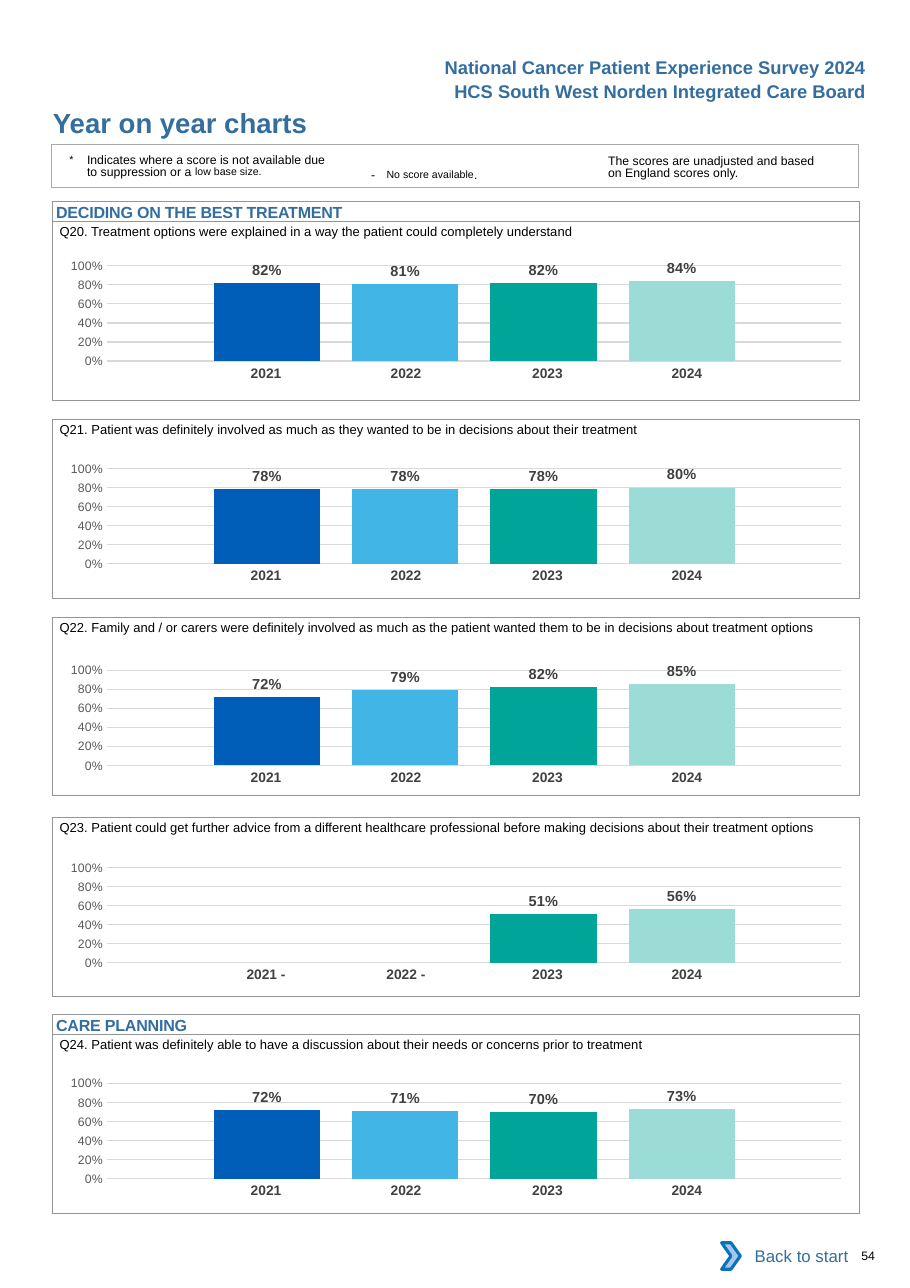
from lxml import etree
from pptx import Presentation
from pptx.chart.data import CategoryChartData
from pptx.dml.color import RGBColor
from pptx.enum.chart import XL_CHART_TYPE as ChartType, XL_LABEL_POSITION as LabelPos, XL_TICK_MARK as Tick
from pptx.enum.shapes import MSO_SHAPE as Shape
from pptx.enum.text import MSO_ANCHOR as Anchor, MSO_AUTO_SIZE as AutoSize, PP_ALIGN as Align
from pptx.oxml import parse_xml
from pptx.oxml.ns import nsdecls, qn
from pptx.util import Inches, Pt

BLUE, BLACK, GREY = "336E9F", "000000", "939598"
BAR_COLOURS = ["005EB8", "41B6E6", "00A499", "9CDCD7"]
YEARS = ["2021", "2022", "2023", "2024"]
YEAR_WIDTHS = [1.27, 1.27, 1.34, 1.27]
YEAR_RIGHT_INSETS = [0, 0, 0.04, 0.12]
PLOT_AREA = {"x": 0.08, "y": 0.15, "w": 0.91, "h": 0.67}
FRAME_LEFT, FRAME_WIDTH, FRAME_HEIGHT = 0.48, 7.32, 1.62

QUESTIONS = [
    (2.01, 2.22, YEARS, [0.82, 0.81, 0.82, 0.84],
     "Q20. Treatment options were explained in a way the patient could completely understand"),
    (3.81, 4.06, YEARS, [0.78, 0.78, 0.78, 0.80],
     "Q21. Patient was definitely involved as much as they wanted to be in decisions about their treatment"),
    (5.60, 5.89, YEARS, [0.72, 0.79, 0.82, 0.85],
     "Q22. Family and / or carers were definitely involved as much as the patient wanted them to be "
     "in decisions about treatment options"),
    (7.42, 7.68, ["2021 -", "2022 -", "2023", "2024"], [None, None, 0.51, 0.56],
     "Q23. Patient could get further advice from a different healthcare professional before making "
     "decisions about their treatment options"),
    (9.39, 9.64, YEARS, [0.72, 0.71, 0.70, 0.73],
     "Q24. Patient was definitely able to have a discussion about their needs or concerns prior to treatment"),
]
SECTIONS = [(1.83, "DECIDING ON THE BEST TREATMENT"), (9.21, "CARE PLANNING")]
BANNER = [(0.68, "HCS South West Norden Integrated Care Board"),
          (0.46, "National Cancer Patient Experience Survey 2024")]


def colour(value):
    return RGBColor.from_string(value)


class SurveyPage:
    """Holds the page style and the slide, and adds each kind of element."""

    font_name = "Arial"

    def __init__(self, deck):
        self.slide = deck.slides.add_slide(deck.slide_layouts[5])
        self.shapes = self.slide.shapes

    def style(self, font, size, hue=BLACK, bold=False):
        values = {"name": self.font_name, "size": Pt(size), "bold": bold}
        for name, value in values.items():
            setattr(font, name, value)
        font.color.rgb = colour(hue)

    def put_words(self, holder, runs, size, hue=BLACK, bold=False, align=Align.LEFT,
                  inset=(0, 0, 0, 0), anchor=Anchor.TOP, wrap=True, line=None):
        frame = holder.text_frame
        settings = {"word_wrap": wrap, "auto_size": AutoSize.NONE, "vertical_anchor": anchor}
        for side, value in zip(("left", "top", "right", "bottom"), inset):
            settings[f"margin_{side}"] = Inches(value)
        for name, value in settings.items():
            setattr(frame, name, value)
        paragraph = frame.paragraphs[0]
        paragraph.alignment = align
        if line:
            paragraph.line_spacing = Pt(line)
        for words, run_size, extras in [(runs, size, {})] if isinstance(runs, str) else runs:
            run = paragraph.add_run()
            run.text = words
            self.style(run.font, run_size, hue, bold)
            for name, value in extras.items():
                run.font._element.set(name, str(value))
        return paragraph

    def text(self, left, top, width, height, runs, size, **look):
        box = self.shapes.add_textbox(Inches(left), Inches(top), Inches(width), Inches(height))
        return self.put_words(box, runs, size, **look)

    def title(self, left, top, width, height, words, size):
        heading = self.shapes.title
        bounds = {"left": left, "top": top, "width": width, "height": height}
        for name, value in bounds.items():
            setattr(heading, name, Inches(value))
        self.put_words(heading, words, size, hue=BLUE, bold=True, inset=(0.01, 0, 0, 0))

    def shape(self, kind, left, top, width, height, fill=None, line=None, weight=0.5):
        item = self.shapes.add_shape(kind, Inches(left), Inches(top), Inches(width), Inches(height))
        item.shadow.inherit = False
        for part, hue in ((item.fill, fill), (item.line.fill, line)):
            if hue:
                part.solid()
                part.fore_color.rgb = colour(hue)
            else:
                part.background()
        if line:
            item.line.width = Pt(weight)
        return item

    def year_row(self, top, years):
        grid = self.shapes.add_table(1, len(years), Inches(1.73), Inches(top),
                                     Inches(sum(YEAR_WIDTHS)), Inches(0.27)).table
        grid.first_row = grid.horz_banding = False
        for index, (year, width, right) in enumerate(zip(years, YEAR_WIDTHS, YEAR_RIGHT_INSETS)):
            grid.columns[index].width = Inches(width)
            cell = grid.cell(0, index)
            cell.fill.background()
            cell.margin_right = Inches(right)
            cell.text = year
            paragraph = cell.text_frame.paragraphs[0]
            paragraph.alignment = Align.CENTER
            self.style(paragraph.runs[0].font, 9, "414042", True)

    def bars(self, top, scores):
        data = CategoryChartData(number_format="0%")
        data.categories = ["1"]
        for number, score in enumerate(scores, 1):
            data.add_series(f"Series {number}", [score])
        chart = self.shapes.add_chart(ChartType.COLUMN_CLUSTERED, Inches(0.39), Inches(top),
                                      Inches(7.32), Inches(1.29), data).chart
        chart.has_legend = chart.has_title = False
        chart.font.name, chart.font.size = "Calibri", Pt(10)
        chart.font.color.rgb = colour(BLACK)
        chart.category_axis.visible = False
        axis = chart.value_axis
        limits = {"minimum_scale": 0, "maximum_scale": 1, "major_unit": 0.2,
                  "major_tick_mark": Tick.NONE, "minor_tick_mark": Tick.NONE}
        for name, value in limits.items():
            setattr(axis, name, value)
        axis.format.line.fill.background()
        axis.major_gridlines.format.line.width = Pt(0.75)
        axis.major_gridlines.format.line.color.rgb = colour("D9D9D9")
        axis.tick_labels.number_format = "0%"
        axis.tick_labels.number_format_is_linked = False
        self.style(axis.tick_labels.font, 8, "595959")
        plot = chart.plots[0]
        for name, value in {"gap_width": 200, "overlap": -30, "vary_by_categories": False}.items():
            setattr(plot, name, value)
        for series, hue in zip(plot.series, BAR_COLOURS):
            series.format.fill.solid()
            series.format.fill.fore_color.rgb = colour(hue)
            labels = series.data_labels
            values = {"show_value": True, "position": LabelPos.OUTSIDE_END,
                      "number_format": "0%", "number_format_is_linked": False}
            for name, value in values.items():
                setattr(labels, name, value)
            self.style(labels.font, 9.5, "404040", True)
        self.place_plot(chart)

    def place_plot(self, chart):
        area = chart._chartSpace.chart.plotArea
        for old in area.findall(qn("c:layout")):
            area.remove(old)
        layout = parse_xml(f"<c:layout {nsdecls('c')}><c:manualLayout/></c:layout>")
        settings = {"layoutTarget": "inner", "xMode": "edge", "yMode": "edge", **PLOT_AREA}
        for name, value in settings.items():
            etree.SubElement(layout[0], qn(f"c:{name}")).set("val", str(value))
        area.insert(0, layout)

    def question(self, top, chart_top, years, scores, words):
        self.year_row(chart_top + 1.05, years)
        self.bars(chart_top, scores)
        self.shape(Shape.RECTANGLE, FRAME_LEFT, top, FRAME_WIDTH, FRAME_HEIGHT, line=GREY)
        self.text(0.54, top - 0.07, 7.21, 0.24, words, 8.5, inset=(0, 0.09, 0, 0))

    def section(self, top, words):
        band = self.shape(Shape.RECTANGLE, FRAME_LEFT, top, FRAME_WIDTH, 0.18, line=GREY)
        self.put_words(band, [(words, 10.5, {"spc": -10})], 10.5, hue=BLUE, bold=True,
                       inset=(0.03, 0.01, 0, 0))

    def key(self):
        self.text(5.52, 1.38, 2.01, 0.27, "The scores are unadjusted and based on England scores only.",
                  8, inset=(0, 0.03, 0, 0), line=8.1)
        self.text(3.27, 1.41, 1.83, 0.24,
                  [("- ", 8, {"spc": 260}), ("No score available", 12, {"baseline": 3000}), (".", 8, {})],
                  8, inset=(0.1, 0.05, 0.1, 0.05))
        suppression = self.text(
            0.63, 1.38, 2.72, 0.27,
            [("*\t", 12, {"baseline": 3000}),
             ("Indicates where a score is not available due to suppression or a ", 8, {}),
             ("low base size.", 12, {"baseline": 7000})],
            8, inset=(0, 0.03, 0.35, 0), line=8.1)
        hanging = suppression._p.get_or_add_pPr()
        hanging.set("marL", str(Inches(0.16)))
        hanging.set("indent", str(-Inches(0.16)))
        self.shape(Shape.RECTANGLE, 0.47, 1.31, 7.32, 0.39, line="A9AAAD", weight=0.75)

    def back_button(self):
        label = self.shape(Shape.RECTANGLE, 6.62, 11.19, 1.18, 0.42, fill="FFFFFF")
        self.put_words(label, "Back to start", 11, hue=BLUE, align=Align.RIGHT,
                       inset=(0.1, 0.05, 0.1, 0.05), anchor=Anchor.MIDDLE)
        self.shape(Shape.CHEVRON, 6.55, 11.28, 0.17, 0.24, fill="A8C7E9", line="0A74BB", weight=2)


def main():
    deck = Presentation()
    deck.slide_width, deck.slide_height = Inches(8.26), Inches(11.69)
    page = SurveyPage(deck)
    page.title(0.47, 0.96, 4.5, 0.3, "Year on year charts", 18)
    page.text(7.72, 11.33, 0.51, 0.13, "54", 8, inset=(0.1, 0, 0, 0))
    for question in QUESTIONS:
        page.question(*question)
    for section in SECTIONS:
        page.section(*section)
    page.key()
    for top, words in BANNER:
        page.text(3.95, top, 4.01, 0.3, words, 12, hue=BLUE, bold=True, align=Align.RIGHT,
                  inset=(0.1, 0.05, 0.1, 0.05), wrap=False)
    page.back_button()
    deck.save("out.pptx")


if __name__ == "__main__":
    main()
